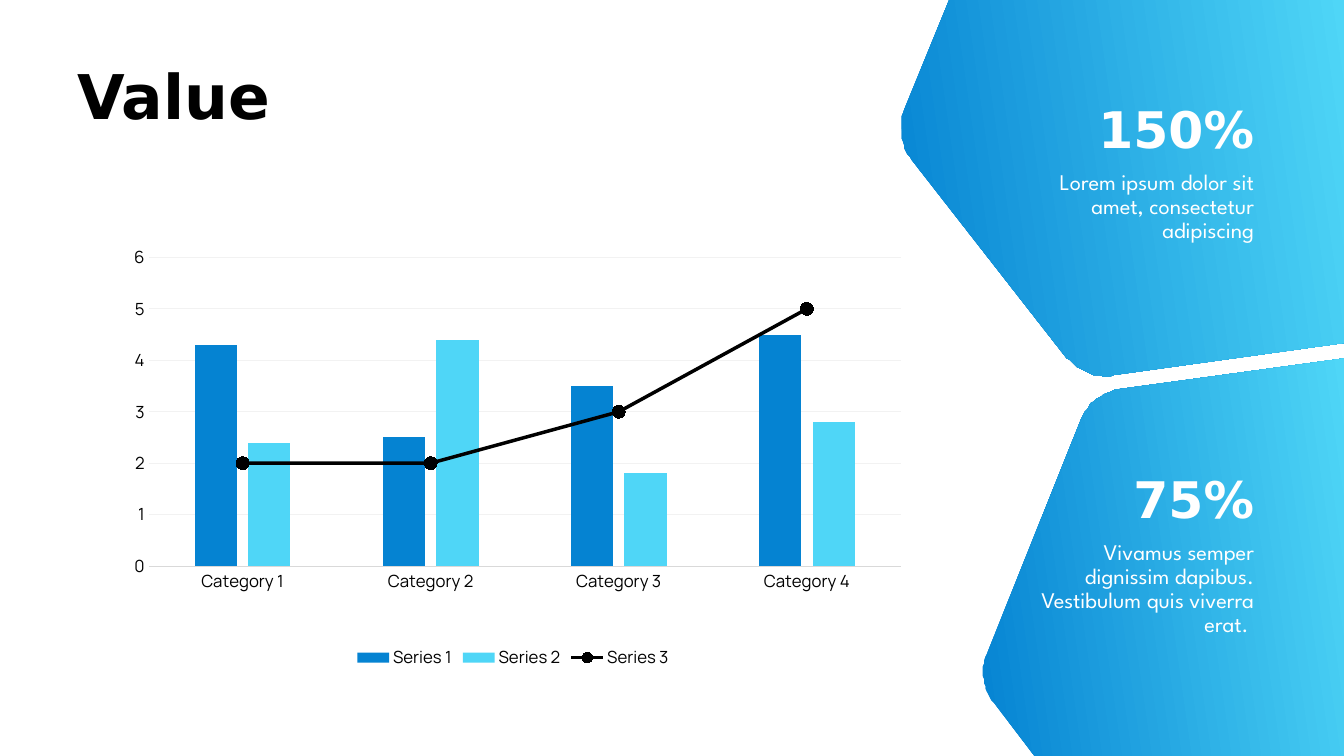
"""Build a value slide with a combined chart and two gradient panels."""
from pptx import Presentation, util as u
from pptx.chart import data as cd
from pptx.dml import color as co
from pptx.enum import chart as ce, text as te
from pptx.oxml import parse_xml
from pptx.oxml import ns

Pt = u.Pt
BLUE = co.RGBColor(0x05, 0x83, 0xD2)
CYAN = co.RGBColor(0x4F, 0xD6, 0xF7)
BLACK = co.RGBColor(0, 0, 0)
WHITE = co.RGBColor(0xFF, 0xFF, 0xFF)
GREY = co.RGBColor(0xD9, 0xD9, 0xD9)
PALE = co.RGBColor(0xF2, 0xF2, 0xF2)

HEAD = {"name": "DejaVu Sans", "bold": True}
BODY = {"name": "League Spartan", "size": Pt(16)}
NOTE = {"name": "Manrope", "size": Pt(12)}
LEFT, RIGHT = te.PP_ALIGN.LEFT, te.PP_ALIGN.RIGHT
TOP, BASE = te.MSO_ANCHOR.TOP, te.MSO_ANCHOR.BOTTOM

PANELS = [
    [(677.5, 0), (960, 0), (960, 244.8), (794.9, 268.4),
     (782.6, 270, 770.4, 265, 762.5, 255.6), (650.9, 113.8),
     (643.7, 103.7, 641.5, 90.7, 645.8, 78.5)],
    [(960, 255.6), (960, 540), (739.4, 540), (709.9, 501.8),
     (702, 492.5, 699.8, 478.8, 704.9, 467.3), (771.8, 300.2),
     (776.9, 288, 787, 280.1, 799.2, 277.9)],
]
FACTS = [
    (60.5, "150%", "Lorem ipsum dolor sit amet, consectetur adipiscing"),
    (324.7, "75%",
     "Vivamus semper dignissim dapibus. Vestibulum quis viverra erat. "),
]
CATS = [f"Category {n}" for n in range(1, 5)]
ROWS = [(4.3, 2.5, 3.5, 4.5), (2.4, 4.4, 1.8, 2.8), (2, 2, 3, 5)]


def put(obj, form):
    """Set each attribute of obj from the dict form."""
    for key, val in form.items():
        setattr(obj, key, val)


def trace(steps, cuts=16):
    """Turn corner points and Bezier steps into a list of points."""
    pts = []
    for step in steps:
        if len(step) == 2:
            pts.append(step)
            continue
        ctrl = [pts[-1], step[:2], step[2:4], step[4:]]
        for n in range(1, cuts + 1):
            t = n / cuts
            w = ((1 - t) ** 3, 3 * t * (1 - t) ** 2, 3 * t * t * (1 - t), t ** 3)
            pts.append(tuple(sum(k * p[i] for k, p in zip(w, ctrl))
                             for i in (0, 1)))
    return pts


def node(xml):
    """Parse a chart XML snippet."""
    return parse_xml(xml.replace(">", f" {ns.nsdecls('c')}>", 1))


class Deck:
    """Hold the style and the current slide."""

    def __init__(self):
        """Open a widescreen deck with one blank slide."""
        self.prs = Presentation()
        put(self.prs, {"slide_width": Pt(960), "slide_height": Pt(540)})
        self.page = self.prs.slides.add_slide(self.prs.slide_layouts[6])

    def panel(self, steps):
        """Draw a rounded panel with a blue gradient."""
        pts = trace(steps)
        pen = self.page.shapes.build_freeform(*pts[0], scale=Pt(1))
        pen.add_line_segments(pts[1:], close=True)
        shape = pen.convert_to_shape()
        shape.shadow.inherit = False
        shape.line.fill.background()
        shape.fill.gradient()
        shape.fill.gradient_angle = 8.1
        for stop, tone in zip(shape.fill.gradient_stops, (BLUE, CYAN)):
            stop.color.rgb = tone

    def text(self, box, words, font, tone, align=LEFT, anchor=TOP):
        """Add one paragraph of text."""
        frame = self.page.shapes.add_textbox(*map(Pt, box)).text_frame
        put(frame, {"word_wrap": True, "vertical_anchor": anchor})
        para = frame.paragraphs[0]
        put(para, {"text": words, "alignment": align, "line_spacing": 0.9})
        put(para.runs[0].font, font)
        para.runs[0].font.color.rgb = tone

    def chart(self, box, cats, rows):
        """Add a column chart whose last series is a line."""
        data = cd.CategoryChartData()
        data.categories = cats
        for n, row in enumerate(rows, 1):
            data.add_series(f"Series {n}", row)
        kind = ce.XL_CHART_TYPE.COLUMN_CLUSTERED
        chart = self.page.shapes.add_chart(kind, *map(Pt, box), data).chart
        put(chart, {"has_title": False, "has_legend": True})
        put(chart.legend, {"position": ce.XL_LEGEND_POSITION.BOTTOM,
                           "include_in_layout": False})
        for part in (chart, chart.legend):
            put(part.font, NOTE)
            part.font.color.rgb = BLACK
        self.axes(chart)
        bars = chart.plots[0]
        put(bars, {"gap_width": 219, "overlap": -27,
                   "vary_by_categories": False})
        for ser, tone in zip(bars.series, (BLUE, CYAN)):
            ser.format.fill.solid()
            ser.format.fill.fore_color.rgb = tone
        self.combine(chart)
        self.curve(chart.plots[1].series[0])

    def axes(self, chart):
        """Style both axes and the grid."""
        cat, val = chart.category_axis, chart.value_axis
        for axis in (cat, val):
            put(axis, {"major_tick_mark": ce.XL_TICK_MARK.NONE,
                       "minor_tick_mark": ce.XL_TICK_MARK.NONE})
            put(axis.tick_labels.font, NOTE)
            axis.tick_labels.font.color.rgb = BLACK
        put(val, {"minimum_scale": 0, "maximum_scale": 6, "major_unit": 1,
                  "has_major_gridlines": True})
        val.format.line.fill.background()
        for line, tone in ((cat.format.line, GREY),
                           (val.major_gridlines.format.line, PALE)):
            line.color.rgb = tone
            line.width = Pt(0.75)

    def combine(self, chart):
        """Move the last series to a line plot and place the plot area."""
        area = chart.element.xpath("//c:plotArea")[0]
        bar = area.xpath("c:barChart")[0]
        ser = bar.xpath("c:ser")[-1]
        for flag in ser.xpath("c:invertIfNegative"):
            ser.remove(flag)
        line = node('<c:lineChart><c:grouping val="standard"/>'
                    '<c:varyColors val="0"/><c:marker val="1"/></c:lineChart>')
        line.insert(2, ser)
        for ref in bar.xpath("c:axId"):
            line.append(node(f'<c:axId val="{ref.get("val")}"></c:axId>'))
        bar.addnext(line)
        for old in area.xpath("c:layout"):
            area.remove(old)
        spots = "".join(f'<c:{key} val="{val}"/>' for key, val in (
            ("layoutTarget", "inner"), ("xMode", "edge"), ("yMode", "edge"),
            ("x", 0.048), ("y", 0.045), ("w", 0.933), ("h", 0.709)))
        area.insert(0, node("<c:layout><c:manualLayout>" + spots
                            + "</c:manualLayout></c:layout>"))

    def curve(self, ser):
        """Style the line series and its markers."""
        ser.smooth = False
        ser.format.line.color.rgb = BLACK
        ser.format.line.width = Pt(2.5)
        put(ser.marker, {"style": ce.XL_MARKER_STYLE.CIRCLE, "size": 9})
        ser.marker.format.fill.solid()
        ser.marker.format.fill.fore_color.rgb = BLACK
        ser.marker.format.line.color.rgb = BLACK


def main():
    """Build and save the slide."""
    deck = Deck()
    for steps in PANELS:
        deck.panel(steps)
    deck.text((48.2, 43.9, 606.2, 91.4), "Value",
              {**HEAD, "size": Pt(44)}, BLACK)
    for top, rate, words in FACTS:
        deck.text((722.9, top, 180, 56.9), rate, {**HEAD, "size": Pt(36)},
                  WHITE, RIGHT, BASE)
        deck.text((722.9, top + 58.3, 180, 116.6), words, BODY, WHITE, RIGHT)
    deck.chart((78.5, 169.9, 576, 311), CATS, ROWS)
    deck.prs.save("out.pptx")


if __name__ == "__main__":
    main()
